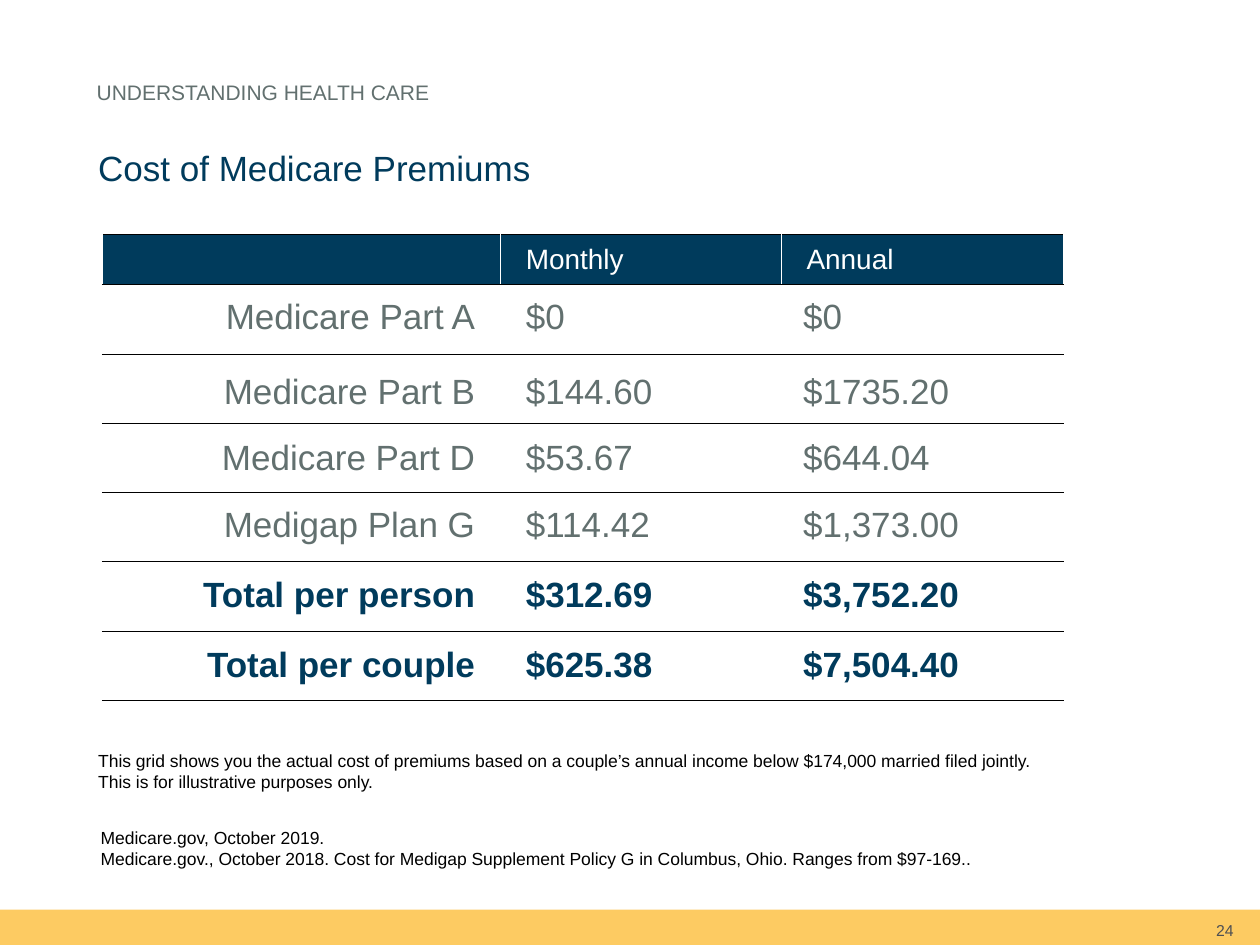
from dataclasses import dataclass

from lxml.etree import SubElement
from pptx import Presentation
from pptx.dml.color import RGBColor
from pptx.enum.shapes import MSO_SHAPE
from pptx.enum.text import MSO_ANCHOR, PP_ALIGN
from pptx.oxml import parse_xml
from pptx.oxml.ns import nsdecls, qn
from pptx.util import Cm, Pt


@dataclass(frozen=True)
class Theme:
    """Colours, type sizes and the font of the slide."""
    font: str = "Arial"
    navy: str = "003B5C"
    gray: str = "62706F"
    dark: str = "4D4F53"
    gold: str = "FDBA2E"
    black: str = "000000"
    white: str = "FFFFFF"
    page: int = 9
    note: int = 10
    section: int = 12
    head: int = 16
    body: int = 20


T = Theme()
NO_STYLE = "{2D5ABB26-0587-4C30-8999-92F81FD0307C}"
ROWS = [
    ("Medicare Part A", "$0", "$0"),
    ("Medicare Part B", "$144.60", "$1735.20"),
    ("Medicare Part D", "$53.67", "$644.04"),
    ("Medigap Plan G", "$114.42", "$1,373.00"),
    ("Total per person", "$312.69", "$3,752.20"),
    ("Total per couple", "$625.38", "$7,504.40"),
]
ROW_TOPS = [0.97, 2.47, 3.81, 5.16, 6.58, 7.98]


def set_text(p, text, size, color, bold=False, align=PP_ALIGN.LEFT):
    """Write one formatted run into a paragraph."""
    p.alignment = align
    r = p.add_run()
    r.text = text
    for name, value in {"name": T.font, "size": Pt(size), "bold": bold}.items():
        setattr(r.font, name, value)
    r.font.color.rgb = RGBColor.from_string(color)


def add_text(s, box, lines, size, color, anchor=MSO_ANCHOR.TOP, align=PP_ALIGN.LEFT, **margins):
    """Place a wrapped text box with one paragraph per line."""
    tf = s.shapes.add_textbox(*map(Cm, box)).text_frame
    for name, value in {"word_wrap": True, "vertical_anchor": anchor, **margins}.items():
        setattr(tf, name, value)
    for i, line in enumerate(lines):
        p = tf.add_paragraph() if i else tf.paragraphs[0]
        set_text(p, line, size, color, align=align)


def add_table(s, box, widths, heights):
    """Add an unstyled table with the given column widths and row heights."""
    table = s.shapes.add_table(len(heights), len(widths), *map(Cm, box)).table
    table.first_row = table.horz_banding = False
    table._tbl.tblPr.find(qn("a:tableStyleId")).text = NO_STYLE
    for column, width in zip(table.columns, widths):
        column.width = Cm(width)
    for row, height in zip(table.rows, heights):
        row.height = Cm(height)
    return table


def set_borders(cell):
    """Draw white sides and black rules around a cell."""
    sides = {"lnL": T.white, "lnR": T.white, "lnT": T.black, "lnB": T.black}
    for i, (tag, color) in enumerate(sides.items()):
        cell._tc.get_or_add_tcPr().insert(i, parse_xml(
            f'<a:{tag} {nsdecls("a")} w="6350"><a:solidFill>'
            f'<a:srgbClr val="{color}"/></a:solidFill></a:{tag}>'))


def fill_cell(cell, text, size, color, bold=False, label=False):
    """Write a label or a value into a table cell."""
    left, right = (0.25, 0.51) if label else (0.51, 0.25)
    formats = {"vertical_anchor": MSO_ANCHOR.MIDDLE,
               "margin_left": Cm(left), "margin_right": Cm(right)}
    for name, value in formats.items():
        setattr(cell, name, value)
    align = PP_ALIGN.RIGHT if label else PP_ALIGN.LEFT
    set_text(cell.text_frame.paragraphs[0], text, size, color, bold, align)


def add_heading(s, left, top, width):
    """Place the section name and the slide title."""
    add_text(s, (left, top, width, 1.47), ["UNDERSTANDING HEALTH CARE"], T.section, T.gray,
             MSO_ANCHOR.BOTTOM, margin_bottom=0)
    add_text(s, (left + 0.03, top + 2.18, width, 1.19), ["Cost of Medicare Premiums"],
             T.body, T.navy)


def add_grid(s, left, top, width, height):
    """Place the ruled grid with its header row."""
    step = (height - 1.02) / len(ROWS)
    table = add_table(s, (left, top, width, height), [8.03, 5.66, width - 13.69],
                      [1.02] + [step] * len(ROWS))
    for i, row in enumerate(table.rows):
        for cell in row.cells:
            set_borders(cell)
            cell.fill.solid()
            cell.fill.fore_color.rgb = RGBColor.from_string(T.white if i else T.navy)
    for j, text in enumerate(["Monthly", "Annual"], 1):
        fill_cell(table.cell(0, j), text, T.head, T.white)


def add_premiums(s, left, top, width):
    """Place one premium row over each row of the grid."""
    for values, offset in zip(ROWS, ROW_TOPS):
        total = values[0].startswith("Total")
        table = add_table(s, (left, top + offset, width, 1.42), [8.03, 5.59, width - 13.62], [1.42])
        for j, text in enumerate(values):
            cell = table.cell(0, j)
            cell.fill.background()
            fill_cell(cell, text, T.body, T.navy if total else T.gray, total, j == 0)


def add_notes(s, left, top):
    """Place the explanation and the sources below the table."""
    add_text(s, (left, top, 19.48, 1.12),
             ["This grid shows you the actual cost of premiums based on a couple’s annual income "
              "below $174,000 married filed jointly. This is for illustrative purposes only."],
             T.note, T.black)
    add_text(s, (left + 0.05, top + 1.55, 23, 1.12),
             ["Medicare.gov, October 2019.",
              "Medicare.gov., October 2018. Cost for Medigap Supplement Policy G in Columbus, "
              "Ohio. Ranges from $97-169.."],
             T.note, T.black)


def add_footer(s, left, top, width, height):
    """Place the gold band and the page number."""
    band = s.shapes.add_shape(MSO_SHAPE.RECTANGLE, *map(Cm, (left, top, width, height)))
    band.shadow.inherit = False
    band.line.fill.background()
    band.fill.solid()
    band.fill.fore_color.rgb = RGBColor.from_string(T.gold)
    SubElement(next(band._element.spPr.iter(qn("a:srgbClr"))), qn("a:alpha"), val="75000")
    add_text(s, (left + width - 6.45, top, 5.92, height), ["24"], T.page, T.dark,
             MSO_ANCHOR.MIDDLE, PP_ALIGN.RIGHT, margin_right=0, margin_bottom=0)


def main():
    """Build the slide and save it."""
    prs = Presentation()
    prs.slide_width, prs.slide_height = Cm(25.4), Cm(19.05)
    s = prs.slides.add_slide(prs.slide_layouts[6])
    add_footer(s, 0, 18.34, 25.4, 0.71)
    add_heading(s, 1.7, 0.64, 22)
    add_grid(s, 2.06, 4.72, 19.38, 9.4)
    add_premiums(s, 2.06, 4.72, 19.38)
    add_notes(s, 1.73, 14.99)
    prs.save("out.pptx")


if __name__ == "__main__":
    main()
